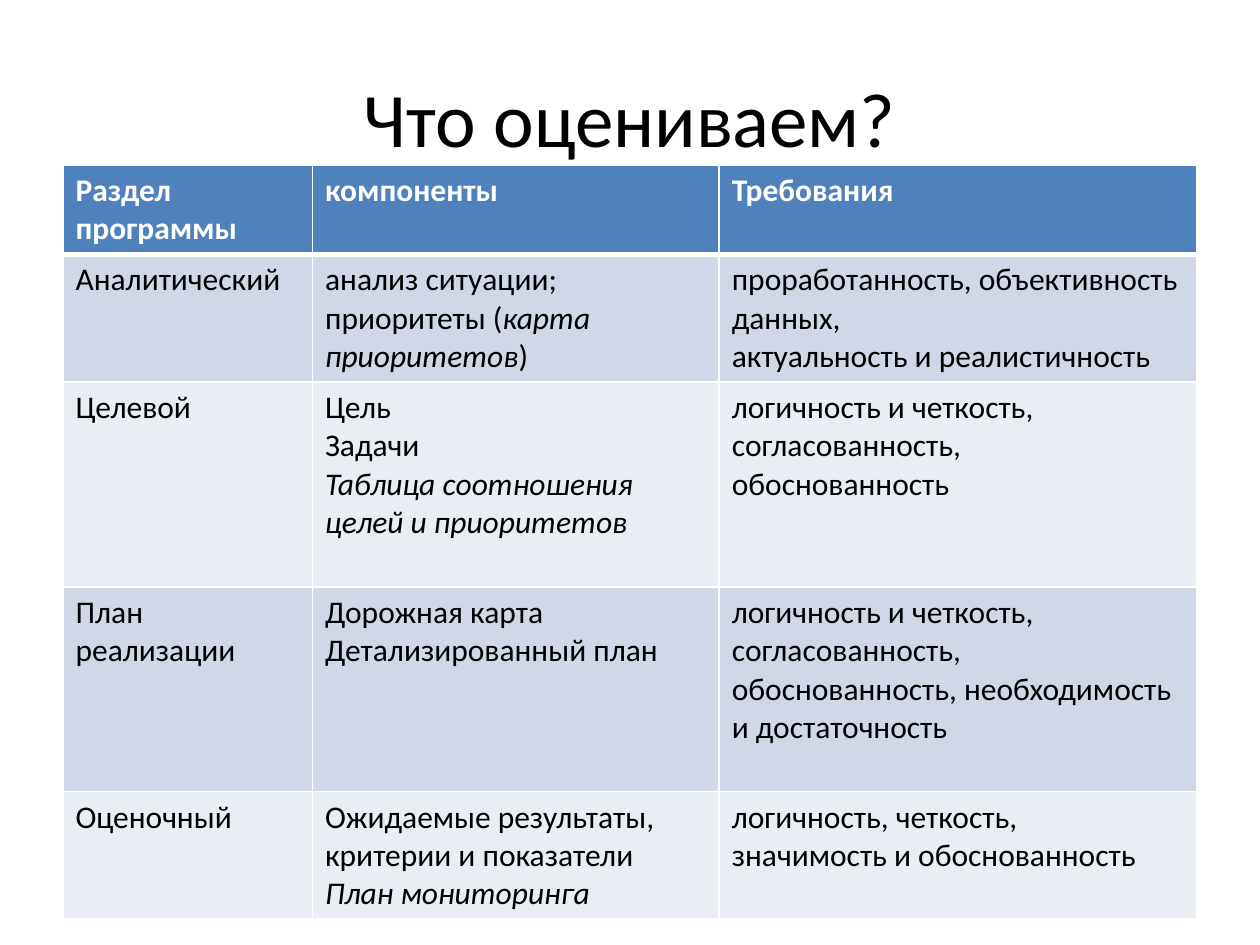
from lxml.etree import SubElement
from pptx import Presentation
from pptx.dml.color import RGBColor as Rgb
from pptx.enum.text import MSO_ANCHOR as Anchor, PP_ALIGN as Align
from pptx.oxml.ns import qn
from pptx.util import Cm, Pt

FONT = "Calibri"
COLORS = {"text": "000000", "head_text": "FFFFFF", "border": "FFFFFF",
          "head": "4F81BD", "odd": "D0D8E8", "even": "E9EDF4"}
COLUMN_WIDTHS = [5.03, 8.2, 9.63]
ROW_HEIGHTS = [1.8, 2.57, 4.13, 4.13, 2.57]

# A cell is a list of paragraphs, a paragraph a list of (text, italic) spans.
ROWS = [
    [[[("Раздел программы", False)]],
     [[("компоненты", False)]],
     [[("Требования", False)]]],
    [[[("Аналитический", False)]],
     [[("анализ ситуации; приоритеты (", False), ("карта приоритетов", True), (")", False)]],
     [[("проработанность, объективность данных,", False)],
      [("актуальность и реалистичность", False)]]],
    [[[("Целевой", False)]],
     [[("Цель", False)],
      [("Задачи", False)],
      [("Таблица соотношения целей и приоритетов", True)]],
     [[("логичность и четкость, согласованность,", False)],
      [("обоснованность", False)]]],
    [[[("План реализации", False)]],
     [[("Дорожная карта", False)],
      [("Детализированный план", False)]],
     [[("логичность и четкость, согласованность, обоснованность, "
        "необходимость и достаточность", False)]]],
    [[[("Оценочный", False)]],
     [[("Ожидаемые результаты, критерии и показатели", False)],
      [("План мониторинга", True)]],
     [[("логичность, четкость,", False)],
      [("значимость и обоснованность", False)]]],
]


def add_span(para, text, size, color, bold=False, italic=False):
    span = para.add_run()
    span.text = text
    font = span.font
    font.name, font.size = FONT, Pt(size)
    font.bold, font.italic = bold, italic
    font.color.rgb = Rgb.from_string(COLORS[color])


def add_title(page, text, left, top, width, height):
    box = page.shapes.add_textbox(left, top, width, height)
    frame = box.text_frame
    frame.word_wrap = True
    frame.vertical_anchor = Anchor.MIDDLE
    para = frame.paragraphs[0]
    para.alignment = Align.CENTER
    add_span(para, text, 44, "text")


def set_borders(cell, **widths):
    """Draw cell borders; sides come in schema order L, R, T, B."""
    properties = cell._tc.get_or_add_tcPr()
    for side, width in widths.items():
        line = SubElement(properties, qn(f"a:ln{side}"), w=str(Pt(width)))
        fill = SubElement(line, qn("a:solidFill"))
        SubElement(fill, qn("a:srgbClr"), val=COLORS["border"])


def fill_cell(cell, paragraphs, row_index):
    is_head = row_index == 0
    set_borders(cell, L=1, R=1, T=3 if row_index == 1 else 1, B=3 if is_head else 1)
    fill = "head" if is_head else "odd" if row_index % 2 else "even"
    cell.fill.solid()
    cell.fill.fore_color.rgb = Rgb.from_string(COLORS[fill])
    frame = cell.text_frame
    for index, spans in enumerate(paragraphs):
        para = frame.add_paragraph() if index else frame.paragraphs[0]
        for text, italic in spans:
            add_span(para, text, 18, "head_text" if is_head else "text", is_head, italic)


def add_criteria_table(page, left, top, width, height):
    table = page.shapes.add_table(len(ROWS), len(COLUMN_WIDTHS),
                                  left, top, width, height).table
    for column, column_width in zip(table.columns, COLUMN_WIDTHS):
        column.width = Cm(column_width)
    for row_index, (row, row_height) in enumerate(zip(table.rows, ROW_HEIGHTS)):
        row.height = Cm(row_height)
        for cell, paragraphs in zip(row.cells, ROWS[row_index]):
            fill_cell(cell, paragraphs, row_index)


def main():
    deck = Presentation()
    deck.slide_width, deck.slide_height = Cm(25.4), Cm(19.05)
    page = deck.slides.add_slide(deck.slide_layouts[6])
    left, width = Cm(1.27), Cm(sum(COLUMN_WIDTHS))
    add_title(page, "Что оцениваем?", left, Cm(0.76), width, Cm(3.18))
    add_criteria_table(page, left, Cm(3.33), width, Cm(sum(ROW_HEIGHTS)))
    deck.save("out.pptx")


if __name__ == "__main__":
    main()
